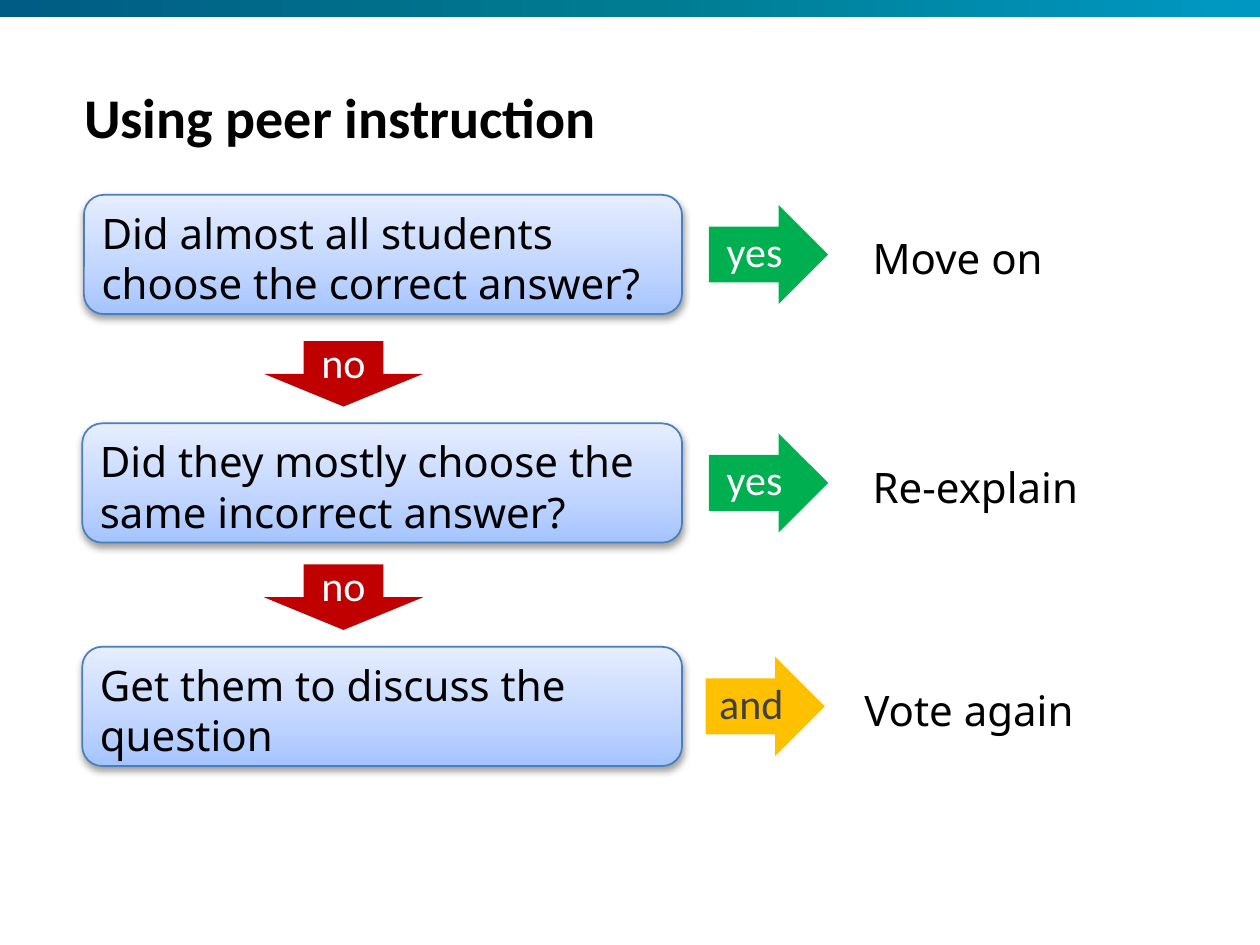
"""Build a slide with the decision flow of peer instruction."""
from lxml.etree import SubElement
from pptx import Presentation
from pptx.dml.color import RGBColor
from pptx.enum.shapes import MSO_SHAPE as SHAPE
from pptx.enum.text import MSO_ANCHOR as ANCHOR, MSO_AUTO_SIZE as AUTO_SIZE, PP_ALIGN as ALIGN
from pptx.oxml.ns import qn
from pptx.util import Inches, Pt

COLORS = {
    "black": "000000", "white": "FFFFFF", "grey": "404040",
    "yes": "00B050", "no": "C00000", "and": "FFC000", "edge": "4B7EBC",
}
BANNER_STOPS = [(0, "005C84"), (51, "007C92"), (100, "0098C3")]
QUESTION_STOPS = [(0, "A4C4FF"), (35, "BFD4FF"), (100, "E6EEFF")]

WIDTH = 7.5
HEIGHT = WIDTH * 3 / 4
ROW_TOPS = [1.16, 2.52, 3.85]
ROW_HEIGHT = 0.71
QUESTION_RIGHT = 4.06
NO_RISE = 0.49
BOX_INSETS = (0.07, 0.04, 0.07, 0)

STEPS = [
    ("Did almost all students choose the correct answer?", 0.5, "yes", 4.22, "Move on", 5.09),
    ("Did they mostly choose the same incorrect answer?", 0.49, "yes", 4.22, "Re-explain", 5.09),
    ("Get them to discuss the question", 0.49, "and", 4.2, "Vote again", 5.04),
]


def write(shape, text, font="Noto Sans", size=18, color="black", bold=False,
          align=ALIGN.LEFT, anchor=ANCHOR.MIDDLE, insets=BOX_INSETS, wrap=True):
    frame = shape.text_frame
    frame.text = text
    frame.word_wrap = wrap
    frame.auto_size = AUTO_SIZE.NONE
    frame.vertical_anchor = anchor
    frame.margin_left, frame.margin_top, frame.margin_right, frame.margin_bottom = map(Inches, insets)
    paragraph = frame.paragraphs[0]
    paragraph.alignment = align
    letters = paragraph.runs[0].font
    letters.name, letters.size, letters.bold = font, Pt(size), bold
    letters.color.rgb = RGBColor.from_string(COLORS[color])


def draw(preset, left, top, width, height, fill=None, stops=None, angle=0):
    shape = slide.shapes.add_shape(preset, *map(Inches, (left, top, width, height)))
    shape.shadow.inherit = False
    shape.line.fill.background()
    if stops:
        shape.fill.gradient()
        shape.fill.gradient_angle = angle
        stop_list = shape._element.spPr.find(qn("a:gradFill")).find(qn("a:gsLst"))
        stop_list.clear()
        for percent, color in stops:
            stop = SubElement(stop_list, qn("a:gs"), pos=str(percent * 1000))
            SubElement(stop, qn("a:srgbClr"), val=color)
    elif fill:
        shape.fill.solid()
        shape.fill.fore_color.rgb = RGBColor.from_string(COLORS[fill])
    else:
        shape.fill.background()
    return shape


deck = Presentation()
deck.slide_width, deck.slide_height = Inches(WIDTH), Inches(HEIGHT)
slide = deck.slides.add_slide(deck.slide_layouts[5])

draw(SHAPE.RECTANGLE, 0, 0, WIDTH, 0.1, stops=BANNER_STOPS)

title = slide.shapes.title
title.left, title.top, title.width, title.height = map(Inches, (0.5, 0.49, 5.55, 0.79))
write(title, "Using peer instruction", font="Calibri", size=24, bold=True,
      anchor=ANCHOR.TOP, insets=(0, 0, 0, 0))

for row, (top, step) in enumerate(zip(ROW_TOPS, STEPS)):
    question, question_left, reply, reply_left, outcome, outcome_left = step

    question_box = draw(SHAPE.ROUNDED_RECTANGLE, question_left, top,
                        QUESTION_RIGHT - question_left, ROW_HEIGHT,
                        stops=QUESTION_STOPS, angle=90)
    question_box.line.color.rgb = RGBColor.from_string(COLORS["edge"])
    question_box.line.width = Pt(0.75)
    effects = question_box._element.spPr.find(qn("a:effectLst"))
    shadow = SubElement(effects, qn("a:outerShdw"), blurRad=str(Pt(3.1)),
                        dist=str(Pt(1.6)), dir="5400000", rotWithShape="0")
    shade = SubElement(shadow, qn("a:srgbClr"), val=COLORS["black"])
    SubElement(shade, qn("a:alpha"), val="38000")
    write(question_box, question)

    if row:
        no_arrow = draw(SHAPE.DOWN_ARROW, 1.57, top - NO_RISE, 0.95, 0.39, fill="no")
        write(no_arrow, "no", font="Calibri", color="white", align=ALIGN.CENTER,
              insets=(0.1, 0, 0.1, 0.05), wrap=False)

    reply_arrow = draw(SHAPE.RIGHT_ARROW, reply_left, top + 0.06, 0.71, 0.59, fill=reply)
    reply_arrow.adjustments[0] = 0.564
    side = 0.06 if reply == "and" else 0.1
    write(reply_arrow, reply, font="Calibri", color="grey" if reply == "and" else "white",
          align=ALIGN.CENTER, insets=(side, 0, side, 0.05), wrap=False)

    write(draw(SHAPE.ROUNDED_RECTANGLE, outcome_left, top, 1.83, ROW_HEIGHT), outcome)

deck.save("out.pptx")
